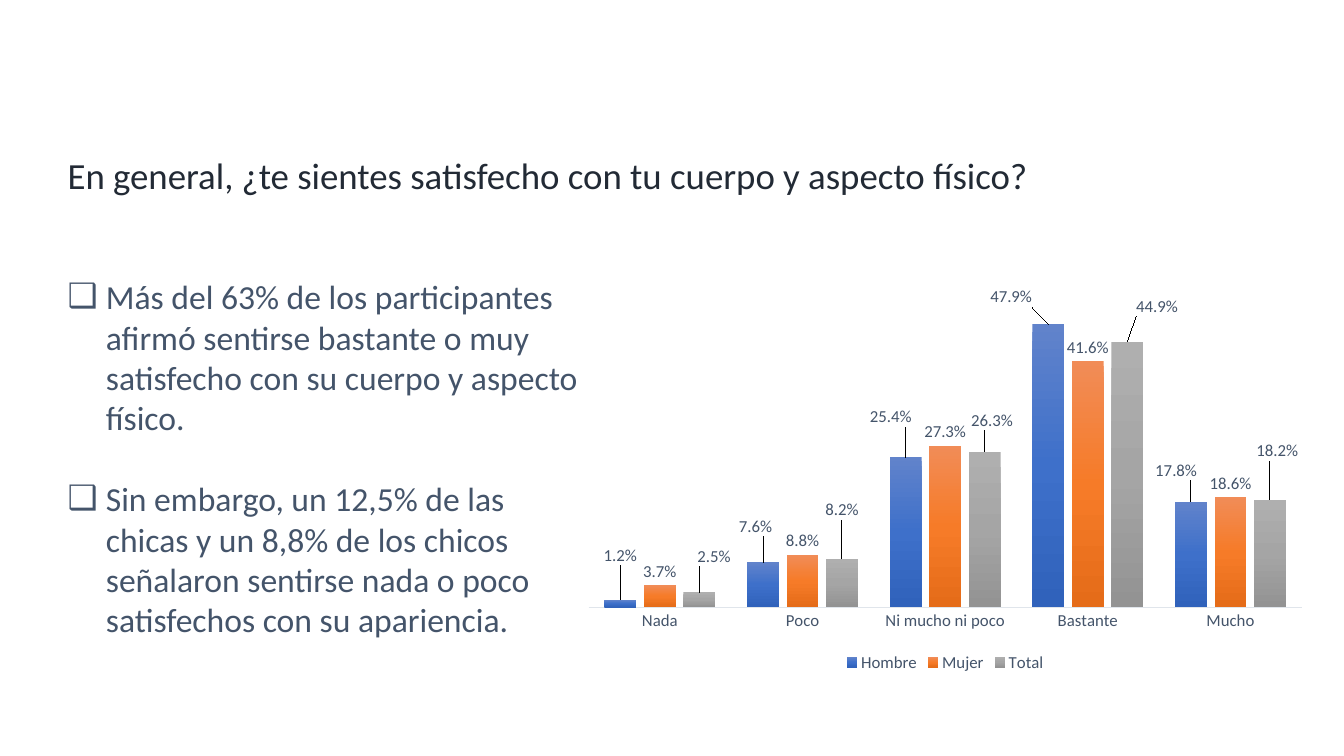
"""Build the slide on satisfaction with body and physical appearance."""
import copy

import pptx
import pptx.chart.data
import pptx.dml.color
import pptx.enum.chart
import pptx.enum.text
import pptx.oxml
import pptx.oxml.ns
import pptx.util

Inches = pptx.util.Inches
Pt = pptx.util.Pt
RGBColor = pptx.dml.color.RGBColor
qn = pptx.oxml.ns.qn

FONT = "Calibri"
PERCENT = "###0.0%"
TITLE_COLOR = RGBColor(0x22, 0x2A, 0x35)
TEXT_COLOR = RGBColor(0x44, 0x54, 0x6A)
AXIS_COLOR = RGBColor(0xE0, 0xE5, 0xEB)
BLUES = [RGBColor(0x61, 0x83, 0xCB), RGBColor(0x3E, 0x70, 0xCA), RGBColor(0x30, 0x62, 0xBB)]
ORANGES = [RGBColor(0xF1, 0x8C, 0x57), RGBColor(0xF6, 0x7B, 0x28), RGBColor(0xE5, 0x6C, 0x19)]
GRAYS = [RGBColor(0xAF, 0xAF, 0xAF), RGBColor(0xA5, 0xA5, 0xA5), RGBColor(0x93, 0x93, 0x93)]

TITLE = "En general, ¿te sientes satisfecho con tu cuerpo y aspecto físico?"
FINDINGS = [
    "Más del 63% de los participantes afirmó sentirse bastante o muy satisfecho "
    "con su cuerpo y aspecto físico.",
    "Sin embargo, un 12,5% de las chicas y un 8,8% de los chicos señalaron sentirse "
    "nada o poco satisfechos con su apariencia.",
]
ANSWERS = ["Nada", "Poco", "Ni mucho ni poco", "Bastante", "Mucho"]
GROUPS = {
    "Hombre": ([0.012, 0.076, 0.254, 0.479, 0.178], BLUES),
    "Mujer": ([0.037, 0.088, 0.273, 0.416, 0.186], ORANGES),
    "Total": ([0.025, 0.082, 0.263, 0.449, 0.182], GRAYS),
}
LABEL_SHIFTS = {
    "Hombre": [(0, -0.07), (-0.01, -0.05), (-0.02, -0.06), (-0.05, -0.03), (-0.02, -0.04)],
    "Total": [(0.02, -0.05), (0, -0.08), (0.01, -0.04), (0.04, -0.05), (0.01, -0.08)],
}


def format_font(font, size=12, color=TEXT_COLOR):
    font.name = FONT
    font.size = Pt(size)
    font.bold = False
    font.color.rgb = color


def manual_layout(**values):
    fields = "".join(f'<c:{name} val="{value}"/>' for name, value in values.items())
    return pptx.oxml.parse_xml(
        f'<c:layout {pptx.oxml.ns.nsdecls("c")}><c:manualLayout>{fields}'
        "</c:manualLayout></c:layout>"
    )


deck = pptx.Presentation()
deck.slide_width = Inches(13.33)
deck.slide_height = Inches(7.5)
page = deck.slides.add_slide(deck.slide_layouts[1])

title = page.shapes.title
title.left, title.top = Inches(0.57), Inches(1.51)
title.width, title.height = Inches(11.81), Inches(0.76)
title.text_frame.text = TITLE
title.text_frame.vertical_anchor = pptx.enum.text.MSO_ANCHOR.TOP
title.text_frame.auto_size = pptx.enum.text.MSO_AUTO_SIZE.NONE
para = title.text_frame.paragraphs[0]
para.alignment = pptx.enum.text.PP_ALIGN.LEFT
para.line_spacing = 0.9
format_font(para.runs[0].font, size=26.3, color=TITLE_COLOR)

body = page.placeholders[1]
body.left, body.top = Inches(0.57), Inches(2.69)
body.width, body.height = Inches(5.4), Inches(3.74)
body.text_frame.text = "\n".join(FINDINGS)
body.text_frame.auto_size = pptx.enum.text.MSO_AUTO_SIZE.SHAPE_TO_FIT_TEXT
for position, para in enumerate(body.text_frame.paragraphs):
    para.space_before = Pt(29 * position)
    properties = para._p.get_or_add_pPr()
    properties.set("marL", str(Inches(0.38)))
    properties.set("indent", str(Inches(-0.38)))
    bullet = pptx.oxml.parse_xml(f'<a:buChar {pptx.oxml.ns.nsdecls("a")} char="❑"/>')
    properties.append(bullet)
    format_font(para.runs[0].font, size=24)

data = pptx.chart.data.CategoryChartData(number_format=PERCENT)
data.categories = ANSWERS
for name, (values, shades) in GROUPS.items():
    data.add_series(name, values)
chart = page.shapes.add_chart(
    pptx.enum.chart.XL_CHART_TYPE.COLUMN_CLUSTERED,
    Inches(5.69), Inches(2.42), Inches(7.37), Inches(4.29), data,
).chart
format_font(chart.font)
chart.has_title = False
chart.has_legend = True
chart.legend.position = pptx.enum.chart.XL_LEGEND_POSITION.BOTTOM
chart.legend.include_in_layout = False
format_font(chart.legend.font)

answer_axis = chart.category_axis
answer_axis.major_tick_mark = pptx.enum.chart.XL_TICK_MARK.NONE
answer_axis.format.line.color.rgb = AXIS_COLOR
answer_axis.format.line.width = Pt(0.75)
format_font(answer_axis.tick_labels.font)
share_axis = chart.value_axis
share_axis.visible = False
share_axis.has_major_gridlines = False
share_axis.minimum_scale = 0
share_axis.maximum_scale = 0.6

plot_area = chart._chartSpace.chart.plotArea
for layout in plot_area.findall(qn("c:layout")):
    plot_area.remove(layout)
plot_area.insert(0, manual_layout(
    layoutTarget="inner", xMode="edge", yMode="edge", x=0.02, y=0.02, w=0.96, h=0.82))

plot = chart.plots[0]
plot.vary_by_categories = False
plot.gap_width = 100
plot.overlap = -24
for series in plot.series:
    fill = series.format.fill
    fill.gradient()
    fill.gradient_angle = 270
    stop_list = series._element.find(".//" + qn("a:gsLst"))
    stop_list.append(copy.deepcopy(stop_list[0]))
    for position, (stop, shade) in enumerate(zip(fill.gradient_stops, GROUPS[series.name][1])):
        stop.position = position / 2
        stop.color.rgb = shade

    labels = series.data_labels
    labels.show_value = True
    labels.number_format = PERCENT
    labels.number_format_is_linked = False
    labels.position = pptx.enum.chart.XL_LABEL_POSITION.OUTSIDE_END
    format_font(labels.font)
    for index, (across, down) in enumerate(LABEL_SHIFTS.get(series.name, [])):
        label = series.points[index].data_label
        label.position = pptx.enum.chart.XL_LABEL_POSITION.OUTSIDE_END
        format_font(label.font)
        label_index = series._element.findall(".//" + qn("c:dLbl"))[index].find(qn("c:idx"))
        label_index.addnext(manual_layout(x=across, y=down))

deck.save("out.pptx")
